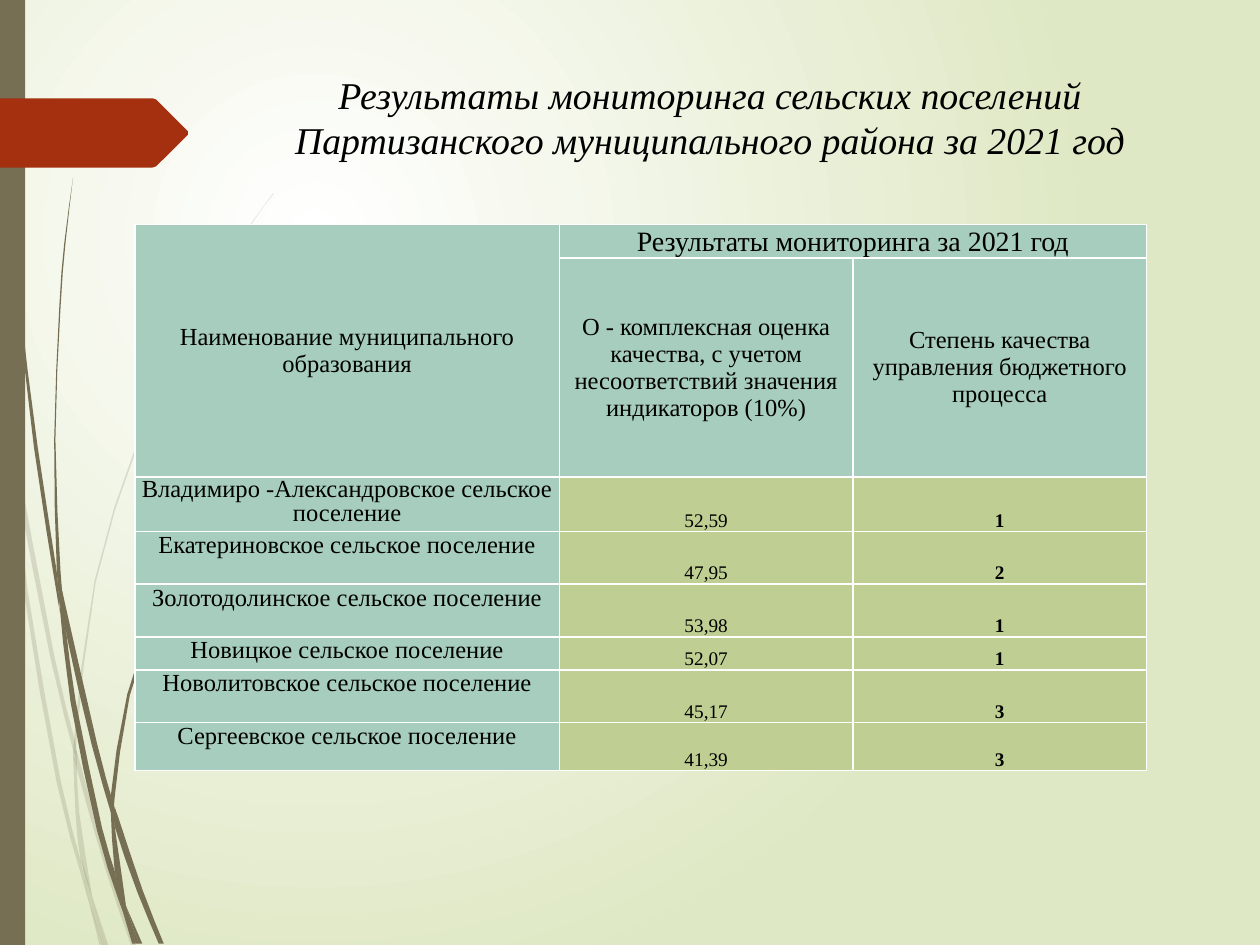
from dataclasses import dataclass

from lxml.etree import SubElement
from pptx import Presentation
from pptx.dml.color import RGBColor
from pptx.enum.shapes import MSO_SHAPE
from pptx.enum.text import MSO_ANCHOR, PP_ALIGN
from pptx.oxml import parse_xml
from pptx.oxml.ns import nsdecls, qn
from pptx.util import Inches, Pt

PALE_GRASS = [
    ([(0, 2.82), (0, 2.99), (0.07, 3.44), (0.08, 3.5)],
     [(0, 2.82), (0.06, 3.22), (0.08, 3.5)]),
    ([(0.1, 3.45), (0.12, 3.76), (0.4, 5.22), (0.59, 5.99)],
     [(0.1, 3.45), (0.43, 5.2), (0.59, 5.86)]),
    ([(0.61, 5.96), (0.61, 6.1), (0.85, 6.94), (1.04, 7.5)],
     [(0.61, 5.96), (0.64, 6.07), (0.88, 6.92), (1.08, 7.5)]),
    ([(0.73, 7.11), (0.83, 7.5)], [(0.73, 7.11), (0.86, 7.5)]),
    ([(0.08, 3.5), (0.19, 4.7), (0.45, 6.21), (0.64, 6.93), (0.7, 7.14)],
     [(0.08, 3.5), (0.12, 3.76), (0.22, 4.69), (0.48, 6.19), (0.64, 6.83), (0.7, 7.14)]),
    ([(0.58, 5.99), (0.6, 6.46), (0.64, 6.83), (0.73, 7.11)],
     [(0.58, 5.99), (0.61, 6.1), (0.63, 6.46), (0.73, 7.11)]),
    ([(2.17, 1.53), (2.01, 1.75), (1.86, 1.97), (1.58, 2.44), (1.1, 3.48), (0.75, 4.61),
      (0.59, 5.84), (0.61, 5.96)],
     [(2.17, 1.54), (2.01, 1.75), (1.87, 1.98), (1.59, 2.45), (1.11, 3.49), (0.76, 4.62),
      (0.61, 5.84), (0.61, 5.96)]),
    ([(0.7, 7.14), (0.79, 7.5)], [(0.7, 7.14), (0.82, 7.5)]),
    ([(0.59, 5.86), (0.58, 5.99), (0.61, 6.1)], [(0.59, 5.86), (0.61, 5.96), (0.61, 6.1)]),
    ([(0.65, 6.83), (0.7, 7.14), (0.82, 7.5)], [(0.65, 6.83), (0.73, 7.11), (0.83, 7.5)]),
]
DARK_GRASS = [
    ([(0.02, 0), (0.03, 0.48), (0.05, 1.1), (0.14, 2.33), (0.27, 3.55), (0.46, 4.77), (0.47, 4.81)],
     [(0.03, 0), (0.04, 0.48), (0.06, 1.09), (0.15, 2.32), (0.3, 3.55), (0.45, 4.53), (0.47, 4.81)]),
    ([(0.5, 4.72), (0.53, 5.05), (0.73, 5.92), (0.88, 6.45)],
     [(0.5, 4.72), (0.77, 5.9), (0.88, 6.31)]),
    ([(0.91, 6.41), (0.91, 6.56), (1.09, 7.08), (1.26, 7.49)],
     [(0.91, 6.41), (0.94, 6.49), (1.13, 7.06), (1.3, 7.49)]),
    ([(0.47, 4.77), (0.56, 5.57), (0.77, 6.59), (0.92, 7.08), (0.97, 7.22)],
     [(0.47, 4.77), (0.53, 5.05), (0.6, 5.56), (0.81, 6.57), (0.91, 6.91), (0.97, 7.22)]),
    ([(0.58, 1.41), (0.51, 1.93), (0.47, 2.45), (0.43, 3.49), (0.45, 4.49), (0.49, 4.72)],
     [(0.58, 1.41), (0.52, 1.93), (0.48, 2.45), (0.44, 3.49), (0.48, 4.53), (0.5, 4.72)]),
    ([(1, 7.19), (1.1, 7.49)], [(1, 7.19), (1.13, 7.49)]),
    ([(0.45, 4.49), (0.47, 4.77), (0.53, 5.05)], [(0.45, 4.49), (0.5, 4.72), (0.53, 5.05)]),
    ([(2.15, 3.44), (2.03, 3.58), (1.91, 3.73), (1.68, 4.05), (1.29, 4.74), (1.01, 5.51),
      (0.88, 6.31), (0.91, 6.41)],
     [(2.16, 3.44), (2.03, 3.59), (1.91, 3.74), (1.69, 4.06), (1.31, 4.76), (1.03, 5.52),
      (0.91, 6.33), (0.91, 6.41)]),
    ([(0.97, 7.22), (1.05, 7.49)], [(0.97, 7.22), (1.08, 7.49)]),
    ([(0.88, 6.45), (0.91, 6.91), (1, 7.19)], [(0.88, 6.45), (0.91, 6.56), (1, 7.19)]),
    ([(0.88, 6.31), (0.88, 6.45), (0.91, 6.56)], [(0.88, 6.31), (0.91, 6.41), (0.91, 6.56)]),
    ([(0.91, 6.91), (0.97, 7.22), (1.08, 7.49)], [(0.91, 6.91), (1, 7.19), (1.1, 7.49)]),
]
PAGE_TAG = [(0, 0.78), (1.21, 0.78), (1.24, 0.79), (1.49, 1.04), (1.49, 1.07),
            (1.24, 1.32), (1.21, 1.33), (0, 1.33)]
SETTLEMENTS = [
    ("Владимиро -Александровское сельское поселение", "52,59", "1"),
    ("Екатериновское сельское поселение", "47,95", "2"),
    ("Золотодолинское сельское поселение", "53,98", "1"),
    ("Новицкое сельское поселение", "52,07", "1"),
    ("Новолитовское сельское поселение", "45,17", "3"),
    ("Сергеевское сельское поселение", "41,39", "3"),
]
ONE_LINE_LENGTH = 40


def colour(value):
    return RGBColor.from_string(value)


def smooth(points):
    if len(points) == 2:
        return points
    padded = [points[0], *points, points[-1]]
    curve = [points[0]]
    for a, b, c, d in zip(padded, padded[1:], padded[2:], padded[3:]):
        middle = tuple((9 * (q + r) - p - s) / 16 for p, q, r, s in zip(a, b, c, d))
        curve += [middle, c]
    return curve


def write(frame, text, size=14, bold=False, italic=False, font="Times New Roman",
          color="000000", spacing=None):
    frame.word_wrap = True
    paragraph = frame.paragraphs[0]
    paragraph.alignment = PP_ALIGN.CENTER
    paragraph.line_spacing = spacing
    run = paragraph.add_run()
    run.text = text
    run.font.size = Pt(size)
    run.font.bold = bold
    run.font.italic = italic
    run.font.name = font
    run.font.color.rgb = colour(color)


@dataclass
class SlideBuilder:
    slide: object
    grass: str = "766F54"
    accent: str = "A53010"
    header: str = "A6CDBD"
    value: str = "BFCE92"
    border: str = "FFFFFF"

    def background(self, inner, outer):
        fill = self.slide.background.fill
        fill.gradient()
        for stop, value in zip(fill.gradient_stops, (inner, outer)):
            stop.color.rgb = colour(value)
        gradient = self.slide.element.find(".//" + qn("a:gradFill"))
        gradient.remove(gradient.find(qn("a:lin")))
        gradient.append(parse_xml(
            f'<a:path {nsdecls("a")} path="circle">'
            '<a:fillToRect l="50000" t="50000" r="100000" b="100000"/></a:path>'))

    def paint(self, shape, fill, opacity=100):
        shape.shadow.inherit = False
        shape.fill.solid()
        shape.fill.fore_color.rgb = colour(fill)
        shape.line.fill.background()
        if opacity < 100:
            tint = shape.element.spPr.find(".//" + qn("a:srgbClr"))
            SubElement(tint, qn("a:alpha"), val=str(opacity * 1000))

    def outline(self, points, fill, opacity=100):
        corners = [(Inches(x), Inches(y)) for x, y in points]
        builder = self.slide.shapes.build_freeform(*corners[0])
        builder.add_line_segments(corners[1:], close=True)
        self.paint(builder.convert_to_shape(), fill, opacity)

    def blades(self, edges, opacity=100):
        for left, right in edges:
            points = dict.fromkeys(smooth(left) + smooth(right)[::-1])
            self.outline(list(points), self.grass, opacity)

    def bar(self, left, top, width, height):
        box = map(Inches, (left, top, width, height))
        self.paint(self.slide.shapes.add_shape(MSO_SHAPE.RECTANGLE, *box), self.grass)

    def title(self, text, left, top, width, height):
        box = map(Inches, (left, top, width, height))
        frame = self.slide.shapes.add_textbox(*box).text_frame
        frame.vertical_anchor = MSO_ANCHOR.TOP
        write(frame, text, size=21.6, italic=True, spacing=1.0)

    def table(self, left, top, widths, heights):
        frame = self.slide.shapes.add_table(
            len(heights), len(widths), Inches(left), Inches(top),
            Inches(sum(widths)), Inches(sum(heights)))
        table = frame.table
        table.first_row = table.horz_banding = False
        for column, width in zip(table.columns, widths):
            column.width = Inches(width)
        for row, height in zip(table.rows, heights):
            row.height = Inches(height)
        for cell in table.iter_cells():
            cell.margin_left = cell.margin_right = cell.margin_top = cell.margin_bottom = 0
            cell.fill.solid()
            cell.fill.fore_color.rgb = colour(self.header)
        for tc in frame.element.iter(qn("a:tc")):
            for index, side in enumerate(("lnL", "lnR", "lnT", "lnB")):
                tc.get_or_add_tcPr().insert(index, parse_xml(
                    f'<a:{side} {nsdecls("a")} w="12700"><a:solidFill>'
                    f'<a:srgbClr val="{self.border}"/></a:solidFill></a:{side}>'))
        return table

    def cell(self, cell, text, fill, anchor, **style):
        cell.fill.fore_color.rgb = colour(fill)
        cell.vertical_anchor = anchor
        write(cell.text_frame, text, **style)


def main():
    presentation = Presentation()
    presentation.slide_width, presentation.slide_height = Inches(10), Inches(7.5)
    page = SlideBuilder(presentation.slides.add_slide(presentation.slide_layouts[6]))
    page.background("FFFFFF", "DFE8C4")
    page.blades(PALE_GRASS, opacity=20)
    page.blades(DARK_GRASS)
    page.bar(0, 0, 0.2, 7.5)
    page.outline(PAGE_TAG, page.accent)
    page.title("Результаты мониторинга сельских поселений Партизанского "
               "муниципального района за 2021 год", 1.77, 0.52, 7.73, 0.87)

    results = page.table(1.07, 1.78, [3.37, 2.33, 2.33],
                         [0.26, 1.74, 0.42, 0.42, 0.42, 0.26, 0.42, 0.38])
    results.cell(0, 0).merge(results.cell(1, 0))
    results.cell(0, 1).merge(results.cell(0, 2))
    headings = [
        (0, 0, "Наименование муниципального образования", MSO_ANCHOR.MIDDLE, 14),
        (0, 1, "Результаты мониторинга за 2021 год", MSO_ANCHOR.BOTTOM, 16),
        (1, 1, "O - комплексная оценка качества, с учетом несоответствий значения "
               "индикаторов (10%)", MSO_ANCHOR.MIDDLE, 14),
        (1, 2, "Степень качества управления бюджетного процесса", MSO_ANCHOR.MIDDLE, 14),
    ]
    for row, column, text, anchor, size in headings:
        page.cell(results.cell(row, column), text, page.header, anchor, size=size)
    for row, (settlement, score, grade) in enumerate(SETTLEMENTS, start=2):
        spacing = 0.92 if len(settlement) > ONE_LINE_LENGTH else None
        page.cell(results.cell(row, 0), settlement, page.header, MSO_ANCHOR.TOP, spacing=spacing)
        page.cell(results.cell(row, 1), score, page.value, MSO_ANCHOR.BOTTOM, size=11)
        page.cell(results.cell(row, 2), grade, page.value, MSO_ANCHOR.BOTTOM, size=11, bold=True)
    presentation.save("out.pptx")


if __name__ == "__main__":
    main()
